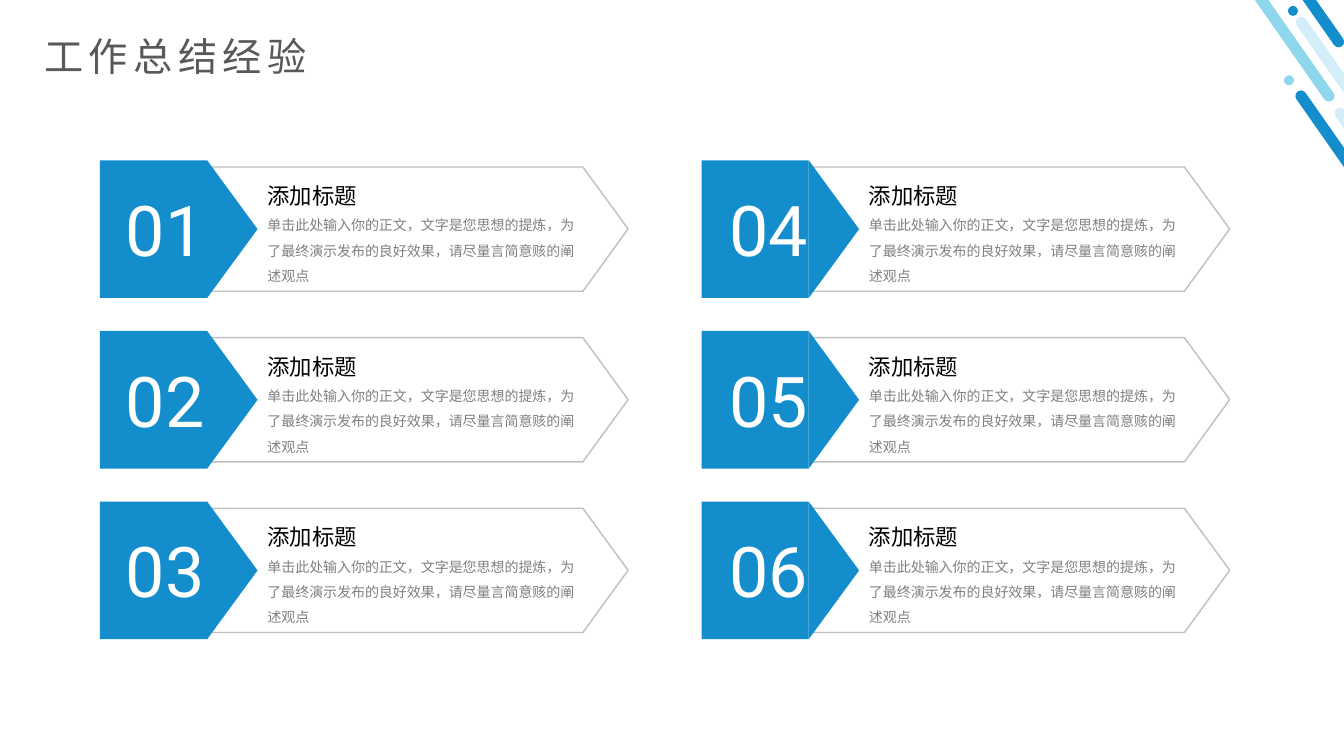
from dataclasses import dataclass
from typing import Any

import pptx
import pptx.dml.color
import pptx.enum.shapes
import pptx.enum.text
import pptx.oxml.ns
import pptx.util
from lxml import etree

Cm = pptx.util.Cm
Pt = pptx.util.Pt
Color = pptx.dml.color.RGBColor
Preset = pptx.enum.shapes.MSO_SHAPE
Align = pptx.enum.text.PP_ALIGN
qn = pptx.oxml.ns.qn


@dataclass(frozen=True)
class Theme:
    blue: str = "138DCC"
    sky: str = "8FD7ED"
    pale: str = "D3EEF9"
    white: str = "FFFFFF"
    outline: str = "BFBFBF"
    title_gray: str = "595959"
    body_gray: str = "808080"
    black: str = "000000"
    chinese_font: str = "Noto Sans CJK SC"
    number_font: str = "Roboto"
    title_size: float = 28
    heading_size: float = 16
    body_size: float = 10
    number_size: float = 50
    outline_width: float = 1


THEME = Theme()


@dataclass(frozen=True)
class Box:
    left: float
    top: float
    width: float
    height: float

    def lengths(self) -> list[Any]:
        return [Cm(value) for value in (self.left, self.top, self.width, self.height)]


@dataclass(frozen=True)
class Decoration:
    box: Box
    color: str
    preset: Any = Preset.ROUNDED_RECTANGLE
    rotation: float = 325


@dataclass(frozen=True)
class TextStyle:
    font: str
    size: float
    color: str
    wrap: bool = True
    letter_spacing: int = 0


@dataclass(frozen=True)
class Card:
    number: str
    left: float
    top: float
    number_width: float


TITLE_STYLE = TextStyle(THEME.chinese_font, THEME.title_size, THEME.title_gray, letter_spacing=400)
HEADING_STYLE = TextStyle(THEME.chinese_font, THEME.heading_size, THEME.black, wrap=False)
BODY_STYLE = TextStyle(THEME.chinese_font, THEME.body_size, THEME.body_gray)
NUMBER_STYLE = TextStyle(THEME.number_font, THEME.number_size, THEME.white)

DECORATIONS = [
    Decoration(Box(34.16, 1.8, 0.28, 5.56), THEME.blue),
    Decoration(Box(32.36, 1.9, 0.25, 0.25), THEME.sky, Preset.OVAL, 0),
    Decoration(Box(35.15, 2.24, 0.28, 5.56), THEME.pale),
    Decoration(Box(31.42, -3.84, 0.28, 7.01), THEME.sky),
    Decoration(Box(34.59, -0.18, 0.28, 7.01), THEME.pale),
    Decoration(Box(32.08, -3.89, 0.28, 5.56), THEME.blue),
    Decoration(Box(32.46, 0.15, 0.25, 0.25), THEME.blue, Preset.OVAL, 0),
]

ROWS = 3
ROW_PITCH = 4.3
COLUMN_PITCH = 15.16
CARDS_LEFT = 2.52
CARDS_TOP = 4.04
NUMBER_WIDTHS = (3.28, 3.4)
BADGE_WIDTH = 2.7
BADGE_HEIGHT = 3.47
ARROW_DEPTH = 1.27
FRAME_POINTS = [(13.31, 1.73), (12.17, 3.3), (0.76, 3.3), (0.76, 0.17), (12.17, 0.17)]
TITLE = "工作总结经验"
HEADING = "添加标题"
BODY = "单击此处输入你的正文，文字是您思想的提炼，为了最终演示发布的良好效果，请尽量言简意赅的阐述观点"


def apply(target: Any, values: dict[str, Any]) -> None:
    for name, value in values.items():
        setattr(target, name, value)


def paint(shape: Any, color: str) -> None:
    shape.shadow.inherit = False
    shape.fill.solid()
    shape.fill.fore_color.rgb = Color.from_string(color)
    shape.line.fill.background()


def add_preset(shapes: Any, preset: Any, box: Box, color: str, rotation: float = 0) -> Any:
    shape = shapes.add_shape(preset, *box.lengths())
    shape.rotation = rotation
    paint(shape, color)
    return shape


def add_text(slide: Any, box: Box, text: str, style: TextStyle, layout: dict[str, Any]) -> None:
    frame = slide.shapes.add_textbox(*box.lengths()).text_frame
    frame.word_wrap = style.wrap
    paragraph = frame.paragraphs[0]
    apply(paragraph, layout)
    run = paragraph.add_run()
    run.text = text
    apply(run.font, {"size": Pt(style.size), "name": style.font})
    run.font.color.rgb = Color.from_string(style.color)
    properties = run.font._element
    etree.SubElement(properties, qn("a:ea")).set("typeface", style.font)
    if style.letter_spacing:
        properties.set("spc", str(style.letter_spacing))


def add_decorations(slide: Any) -> None:
    shapes = slide.shapes.add_group_shape().shapes
    for item in DECORATIONS:
        shape = add_preset(shapes, item.preset, item.box, item.color, item.rotation)
        if item.preset == Preset.ROUNDED_RECTANGLE:
            shape.adjustments[0] = 0.5


def add_frame(shapes: Any, card: Card) -> None:
    points = [(Cm(card.left + x), Cm(card.top + y)) for x, y in FRAME_POINTS]
    builder = shapes.build_freeform(*points[0])
    builder.add_line_segments(points[1:], close=True)
    frame = builder.convert_to_shape()
    paint(frame, THEME.white)
    frame.line.color.rgb = Color.from_string(THEME.outline)
    frame.line.width = Pt(THEME.outline_width)


def add_card(slide: Any, card: Card) -> None:
    shapes = slide.shapes.add_group_shape().shapes
    add_frame(shapes, card)
    badge = Box(card.left, card.top, BADGE_WIDTH, BADGE_HEIGHT)
    add_preset(shapes, Preset.RECTANGLE, badge, THEME.blue)
    inset = (BADGE_HEIGHT - ARROW_DEPTH) / 2
    arrow = Box(card.left + BADGE_WIDTH - inset, card.top + inset, BADGE_HEIGHT, ARROW_DEPTH)
    add_preset(shapes, Preset.ISOSCELES_TRIANGLE, arrow, THEME.blue, 90)

    text_left = card.left + 3.97
    body_layout = {"line_spacing": 1.5, "space_before": Pt(13.3)}
    add_text(slide, Box(text_left, card.top + 1.09, 8.26, 1.47), BODY, BODY_STYLE, body_layout)
    add_text(slide, Box(text_left, card.top + 0.43, 2.77, 0.94), HEADING, HEADING_STYLE, {})
    number_box = Box(card.left, card.top + 0.54, card.number_width, 2.39)
    add_text(slide, number_box, card.number, NUMBER_STYLE, {"alignment": Align.CENTER})


def main() -> None:
    presentation = pptx.Presentation()
    apply(presentation, {"slide_width": Cm(33.87), "slide_height": Cm(19.05)})
    slide = presentation.slides.add_slide(presentation.slide_layouts[6])
    add_decorations(slide)
    add_text(slide, Box(0.86, 0.69, 33.07, 1.45), TITLE, TITLE_STYLE, {})
    for column, number_width in enumerate(NUMBER_WIDTHS):
        for row in range(ROWS):
            number = f"{column * ROWS + row + 1:02d}"
            left = CARDS_LEFT + column * COLUMN_PITCH
            top = CARDS_TOP + row * ROW_PITCH
            add_card(slide, Card(number, left, top, number_width))
    presentation.save("out.pptx")


if __name__ == "__main__":
    main()
